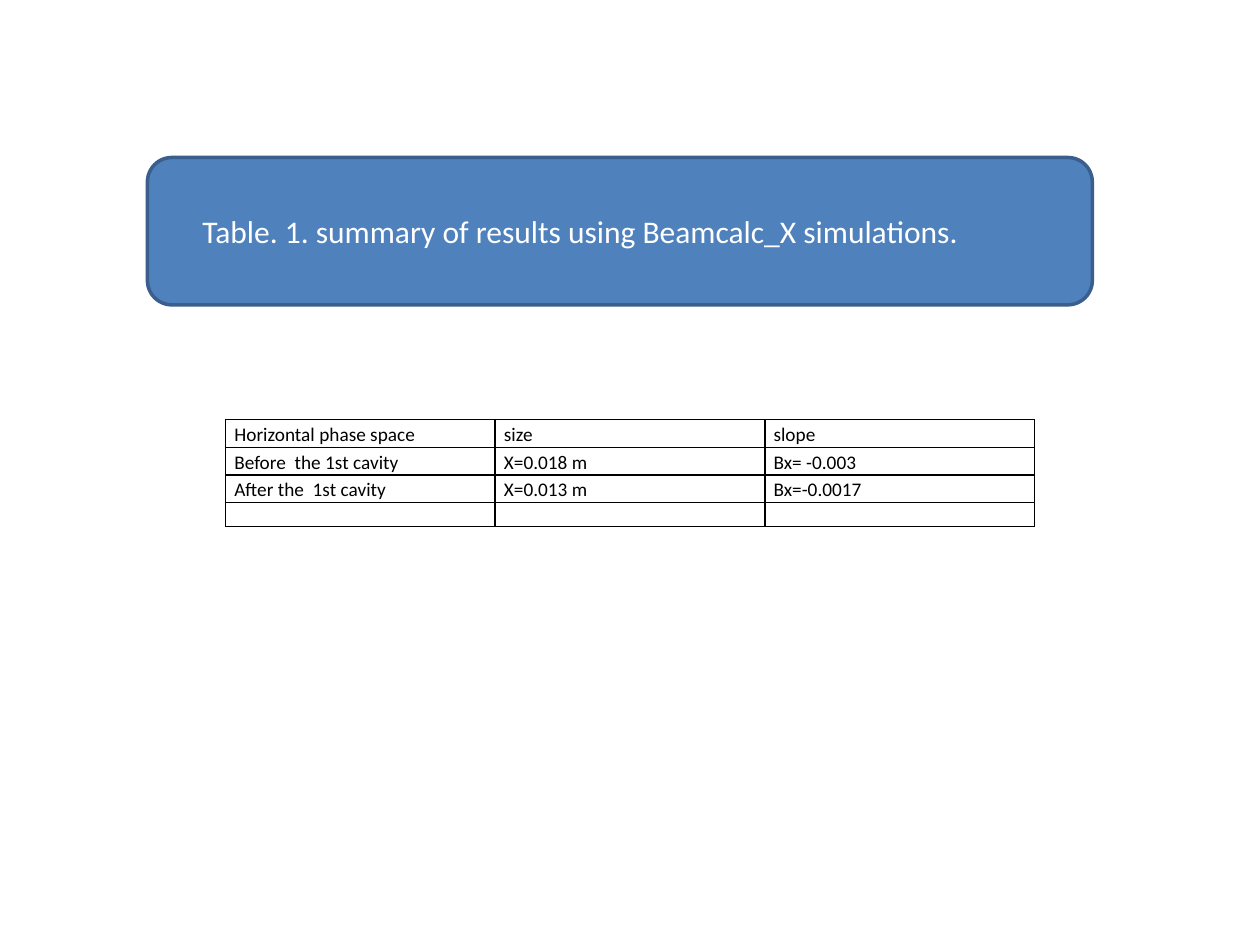
from lxml import etree
from pptx import Presentation
from pptx import util as u
from pptx.dml.color import RGBColor
from pptx.enum import shapes, text
from pptx.oxml.ns import qn

COLORS = {"banner": "4F81BD", "outline": "3A5F8C", "light": "FFFFFF", "ink": "000000"}
ROWS = [
    ("Horizontal phase space", "size", "slope"),
    ("Before  the 1st cavity", "X=0.018 m", "Bx= -0.003"),
    ("After the  1st cavity", "X=0.013 m", "Bx=-0.0017"),
    ("", "", ""),
]


class SlideBuilder:
    font = "Calibri"

    def __init__(self, page):
        self.page = page

    def color(self, name):
        return RGBColor.from_string(COLORS[name])

    def style(self, paragraph, size, color):
        paragraph.alignment = text.PP_ALIGN.LEFT
        for span in paragraph.runs:
            span.font.name = self.font
            span.font.size = u.Pt(size)
            span.font.color.rgb = self.color(color)

    def banner(self, words, left, top, width, height):
        box = self.page.shapes.add_shape(
            shapes.MSO_SHAPE.ROUNDED_RECTANGLE,
            *(u.Inches(length) for length in (left, top, width, height)))
        box.shadow.inherit = False
        box.fill.solid()
        box.fill.fore_color.rgb = self.color("banner")
        box.line.color.rgb = self.color("outline")
        box.line.width = u.Pt(2)
        frame = box.text_frame
        frame.text = words
        frame.word_wrap = True
        frame.margin_left = u.Inches(0.38)
        frame.vertical_anchor = text.MSO_ANCHOR.MIDDLE
        self.style(frame.paragraphs[0], 18, "light")

    def borders(self, cell, points):
        properties = cell._tc.get_or_add_tcPr()
        for position, side in enumerate(("lnL", "lnR", "lnT", "lnB")):
            line = etree.Element(qn(f"a:{side}"), w=str(u.Pt(points)))
            fill = etree.SubElement(line, qn("a:solidFill"))
            etree.SubElement(fill, qn("a:srgbClr"), val=COLORS["ink"])
            properties.insert(position, line)

    def fill_cell(self, cell, words, size):
        cell.margin_left = cell.margin_right = u.Inches(0.07)
        cell.margin_top = cell.margin_bottom = 0
        cell.fill.background()
        self.borders(cell, 1)
        cell.text_frame.text = words
        paragraph = cell.text_frame.paragraphs[0]
        self.style(paragraph, size, "ink")
        if words:
            paragraph.line_spacing = 1.15
        else:
            etree.SubElement(paragraph._p, qn("a:endParaRPr"), sz=str(size * 100))

    def table(self, rows, left, top, column_width, row_height):
        columns = len(rows[0])
        table = self.page.shapes.add_table(
            len(rows), columns, u.Inches(left), u.Inches(top),
            u.Inches(column_width * columns), u.Inches(row_height * len(rows))).table
        table.first_row = table.horz_banding = False
        for row, values in zip(table.rows, rows):
            row.height = u.Inches(row_height if any(values) else 0.19)
            for cell, words in zip(row.cells, values):
                self.fill_cell(cell, words, 11)


def main():
    deck = Presentation()
    deck.slide_width, deck.slide_height = u.Inches(10), u.Inches(7.5)
    builder = SlideBuilder(deck.slides.add_slide(deck.slide_layouts[6]))
    builder.banner("Table. 1. summary of results using Beamcalc_X simulations.",
                   1.17, 1.25, 7.5, 1.17)
    builder.table(ROWS, 1.79, 3.33, 2.14, 0.22)
    deck.save("out.pptx")


if __name__ == "__main__":
    main()
